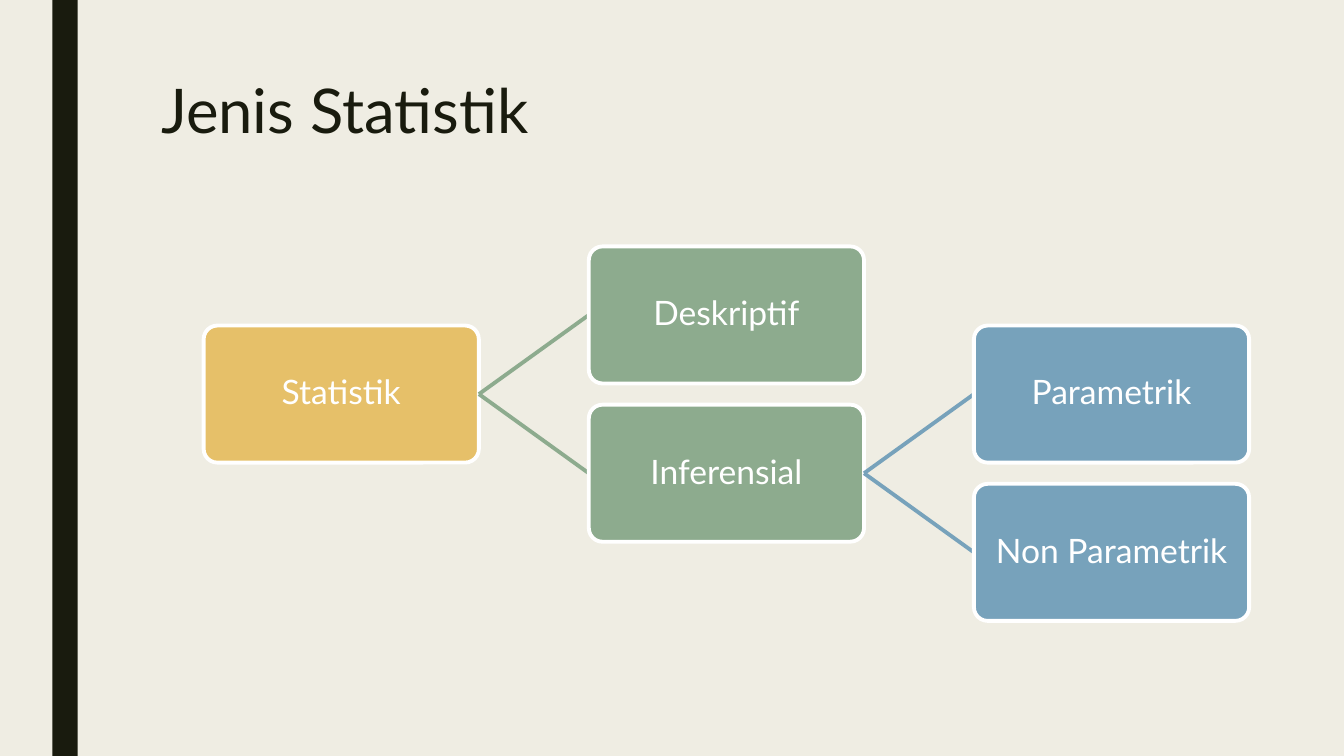
from pptx import Presentation
from pptx.dml.color import RGBColor
from pptx.enum.shapes import MSO_CONNECTOR, MSO_SHAPE
from pptx.enum.text import MSO_ANCHOR, PP_ALIGN
from pptx.oxml.ns import qn
from pptx.util import Inches, Pt
from lxml import etree

RECTANGLE = MSO_SHAPE.RECTANGLE
ROUNDED = MSO_SHAPE.ROUNDED_RECTANGLE
STRAIGHT = MSO_CONNECTOR.STRAIGHT
TOP, MIDDLE = MSO_ANCHOR.TOP, MSO_ANCHOR.MIDDLE
LEFT, CENTER = PP_ALIGN.LEFT, PP_ALIGN.CENTER
LEFT_SITE, RIGHT_SITE = 1, 3

FONT = "Lato"
COLORS = {"paper": "EFEDE3", "ink": "191B0E", "white": "FFFFFF",
          "gold": "E6C069", "green": "8DAB8E", "blue": "77A2BB"}
LEVEL_COLORS = ["gold", "green", "blue"]
LINE_WIDTH = Pt(2.75)

# Tree grid, in inches
NODE_WIDTH, NODE_HEIGHT = 2.73, 1.36
COLUMN_STEP, ROW_STEP = 3.82, 1.57

TREE = ("Statistik", [
    ("Deskriptif", []),
    ("Inferensial", [("Parametrik", []), ("Non Parametrik", [])]),
])


def color(name):
    return RGBColor.from_string(COLORS[name])


def write(shape, text, size, ink, align, anchor, spacing):
    frame = shape.text_frame
    frame.word_wrap = True
    frame.vertical_anchor = anchor
    frame.text = text
    para = frame.paragraphs[0]
    para.alignment = align
    para.line_spacing = spacing
    font = para.runs[0].font
    font.name, font.size = FONT, Pt(size)
    font.color.rgb = color(ink)


def add_side_bar(page, left, width, height):
    bar = page.shapes.add_shape(RECTANGLE, left, 0, width, height)
    bar.shadow.inherit = False
    bar.fill.solid()
    bar.fill.fore_color.rgb = color("ink")
    bar.line.fill.background()


def add_title(page, text, left, top, width, height):
    box = page.shapes.add_textbox(left, top, width, height)
    write(box, text, 44, "ink", LEFT, TOP, 0.89)


def add_node(page, text, fill, left, middle):
    node = page.shapes.add_shape(
        ROUNDED, Inches(left), Inches(middle - NODE_HEIGHT / 2),
        Inches(NODE_WIDTH), Inches(NODE_HEIGHT))
    node.adjustments[0] = 0.1
    node.shadow.inherit = False
    node.fill.solid()
    node.fill.fore_color.rgb = color(fill)
    node.line.color.rgb = color("white")
    node.line.width = LINE_WIDTH
    frame = node.text_frame
    frame.margin_left = frame.margin_right = Inches(0.06)
    frame.margin_top = frame.margin_bottom = Inches(0.06)
    write(node, text, 24, "white", CENTER, MIDDLE, 0.9)
    return node


def add_branch(page, parent, tint):
    """Start a line at the parent's right side; its end is joined later."""
    x, y = parent.left + parent.width, parent.top + parent.height // 2
    branch = page.shapes.add_connector(STRAIGHT, x, y, x, y)
    branch.begin_connect(parent, RIGHT_SITE)
    branch.line.color.rgb = color(tint)
    branch.line.width = LINE_WIDTH
    etree.SubElement(branch._element.spPr, qn("a:effectLst"))
    return branch


def add_tree(page, tree, left, middle, level=0, parent=None):
    """Draw a node, then its children one column right, centred on it."""
    text, children = tree
    tint = LEVEL_COLORS[level]
    branch = add_branch(page, parent, tint) if parent else None
    node = add_node(page, text, tint, left, middle)
    if branch:
        branch.end_connect(node, LEFT_SITE)
    for row, child in enumerate(children):
        offset = (row - (len(children) - 1) / 2) * ROW_STEP
        add_tree(page, child, left + COLUMN_STEP, middle + offset,
                 level + 1, node)


def main():
    deck = Presentation()
    deck.slide_width, deck.slide_height = Inches(13.33), Inches(7.5)
    page = deck.slides.add_slide(deck.slide_layouts[6])
    page.background.fill.solid()
    page.background.fill.fore_color.rgb = color("paper")
    add_side_bar(page, Inches(0.52), Inches(0.25), deck.slide_height)
    add_title(page, "Jenis Statistik",
              Inches(1.5), Inches(0.75), Inches(10.5), Inches(1.62))
    add_tree(page, TREE, left=2.02, middle=3.91)
    deck.save("out.pptx")


if __name__ == "__main__":
    main()
